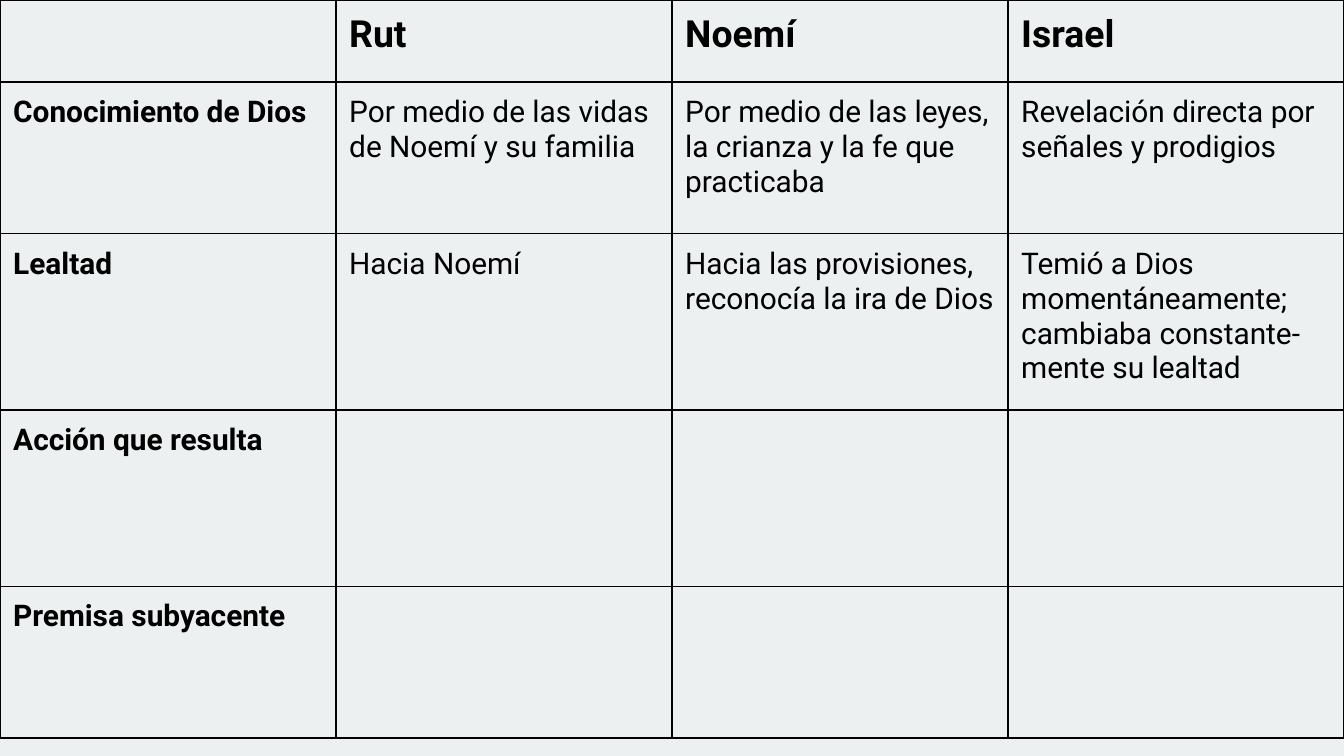
from lxml.etree import SubElement
from pptx import Presentation
from pptx.dml.color import RGBColor
from pptx.oxml.ns import qn
from pptx.util import Cm, Pt

COLORS = {"background": "ECF0F1", "text": "000000", "border": "000000"}
FONT = "Roboto"
COMPARISON = [
    ["", "Rut", "Noemí", "Israel"],
    ["Conocimiento de Dios",
     "Por medio de las vidas de Noemí y su familia",
     "Por medio de las leyes, la crianza y la fe que practicaba",
     "Revelación directa por señales y prodigios"],
    ["Lealtad",
     "Hacia Noemí",
     "Hacia las provisiones, reconocía la ira de Dios",
     "Temió a Dios momentáneamente; cambiaba constante-mente su lealtad"],
    ["Acción que resulta", "", "", ""],
    ["Premisa subyacente", "", "", ""],
]
ROW_HEIGHTS = [1.55, 2.87, 3.33, 3.33, 2.87]
COLUMN_WIDTH = 6.35
INSET = Cm(0.25)


def add_borders(cell):
    properties = cell._tc.get_or_add_tcPr()
    for position, side in enumerate(("a:lnL", "a:lnR", "a:lnT", "a:lnB")):
        line = SubElement(properties, qn(side), w=str(Pt(0.75)))
        fill = SubElement(line, qn("a:solidFill"))
        SubElement(fill, qn("a:srgbClr"), val=COLORS["border"])
        # Borders must precede the cell fill
        properties.insert(position, line)


prs = Presentation()
prs.slide_width, prs.slide_height = Cm(25.4), Cm(14.29)
slide = prs.slides.add_slide(prs.slide_layouts[6])
background = slide.background.fill
background.solid()
background.fore_color.rgb = RGBColor.from_string(COLORS["background"])

table = slide.shapes.add_table(
    len(COMPARISON), len(COMPARISON[0]), 0, 0,
    Cm(COLUMN_WIDTH * len(COMPARISON[0])), Cm(sum(ROW_HEIGHTS))).table
table.first_row = False
table.horz_banding = False
for column in table.columns:
    column.width = Cm(COLUMN_WIDTH)

for row, (height, entries) in enumerate(zip(ROW_HEIGHTS, COMPARISON)):
    table.rows[row].height = Cm(height)
    for col, entry in enumerate(entries):
        cell = table.cell(row, col)
        cell.fill.background()
        add_borders(cell)
        cell.margin_left = cell.margin_right = INSET
        cell.margin_top = cell.margin_bottom = INSET
        cell.text = entry
        font = cell.text_frame.paragraphs[0].font
        font.name = FONT
        font.size = Pt(20 if row == 0 else 16)
        font.bold = row == 0 or col == 0
        font.color.rgb = RGBColor.from_string(COLORS["text"])

prs.save("out.pptx")
